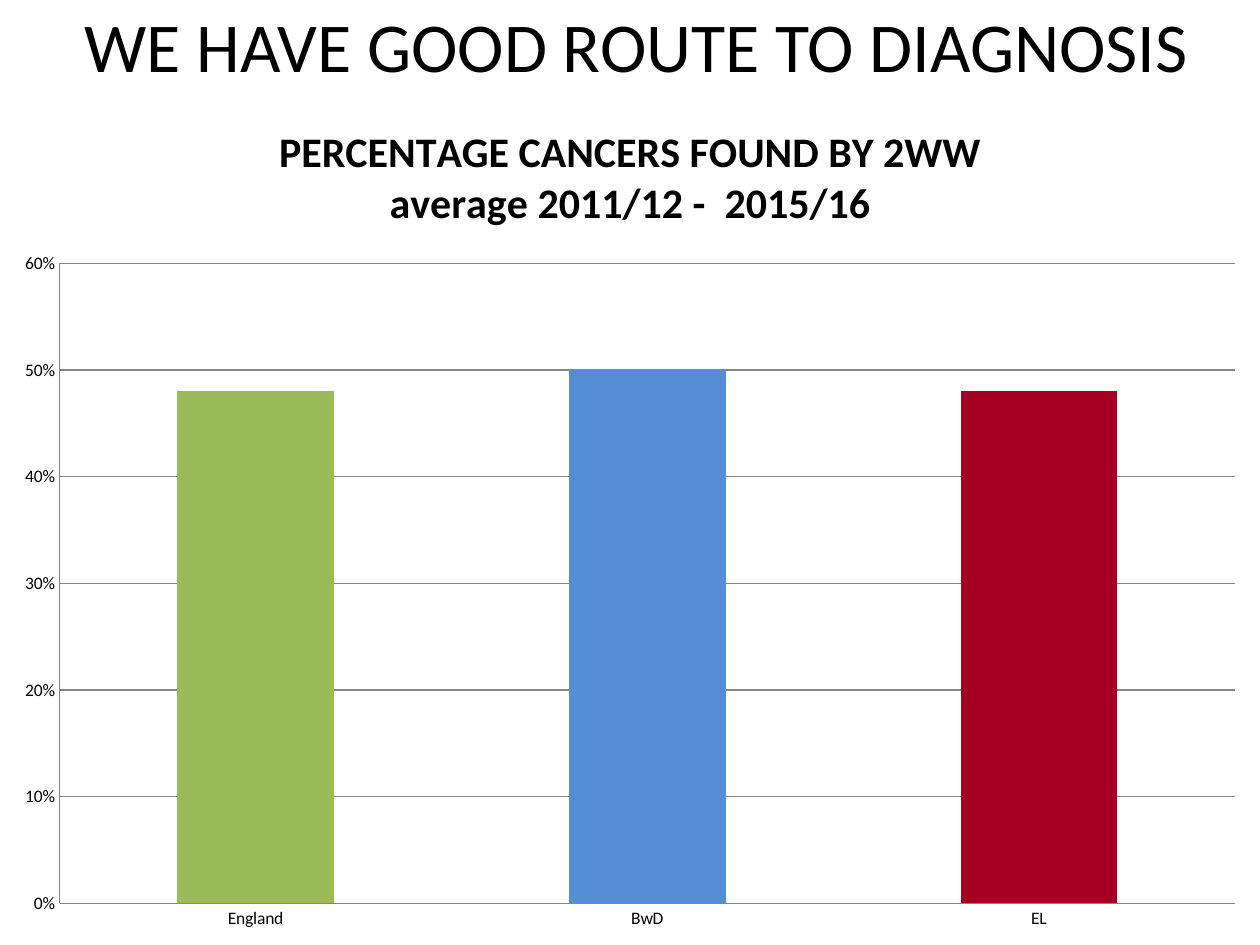
from pptx import Presentation
from pptx.chart.data import CategoryChartData
from pptx.dml.color import RGBColor
from pptx.enum.chart import XL_CHART_TYPE as Kind, XL_TICK_MARK as Tick
from pptx.enum.text import MSO_ANCHOR as Anchor, PP_ALIGN as Align
from pptx.util import Pt

BLACK = RGBColor(0x00, 0x00, 0x00)
GRAY = RGBColor(0x86, 0x86, 0x86)
GREEN = RGBColor(0x9B, 0xBB, 0x59)
BLUE = RGBColor(0x55, 0x8E, 0xD5)
RED = RGBColor(0xA5, 0x00, 0x21)
FACE = "Calibri"


def style(font, size, bold=False):
    font.name = FACE
    font.size = Pt(size)
    font.bold = bold
    font.color.rgb = BLACK


deck = Presentation()
deck.slide_width, deck.slide_height = Pt(720), Pt(540)
slide = deck.slides.add_slide(deck.slide_layouts[6])

head = slide.shapes.add_textbox(Pt(39.6), Pt(-16.5), Pt(648), Pt(84)).text_frame
head.word_wrap = True
head.vertical_anchor = Anchor.MIDDLE
head.text = "WE HAVE GOOD ROUTE TO DIAGNOSIS"
head.paragraphs[0].alignment = Align.CENTER
style(head.paragraphs[0].runs[0].font, 40)

data = CategoryChartData(number_format="0%")
data.categories = ["England", "BwD", "EL"]
data.add_series("Series 1", [0.48, 0.5, 0.48])
chart = slide.shapes.add_chart(
    Kind.COLUMN_CLUSTERED, Pt(0), Pt(56), Pt(720), Pt(484), data
).chart
style(chart.font, 10)
chart.has_legend = False

title = chart.chart_title
title.include_in_layout = False
title.text_frame.text = "PERCENTAGE CANCERS FOUND BY 2WW\naverage 2011/12 -  2015/16"
for line in title.text_frame.paragraphs:
    style(line.runs[0].font, 24, True)

for axis in (chart.category_axis, chart.value_axis):
    axis.major_tick_mark = axis.minor_tick_mark = Tick.NONE
    axis.format.line.color.rgb = GRAY
    axis.format.line.width = Pt(0.75)

scale = chart.value_axis
scale.minimum_scale, scale.maximum_scale, scale.major_unit = 0, 0.6, 0.1
scale.tick_labels.number_format = "0%"
scale.tick_labels.number_format_is_linked = False
scale.has_major_gridlines = True
scale.major_gridlines.format.line.color.rgb = GRAY
scale.major_gridlines.format.line.width = Pt(0.75)

plot = chart.plots[0]
plot.gap_width = 150
plot.vary_by_categories = False
for i, color in enumerate((GREEN, BLUE, RED)):
    fill = plot.series[0].points[i].format.fill
    fill.solid()
    fill.fore_color.rgb = color

deck.save("out.pptx")
